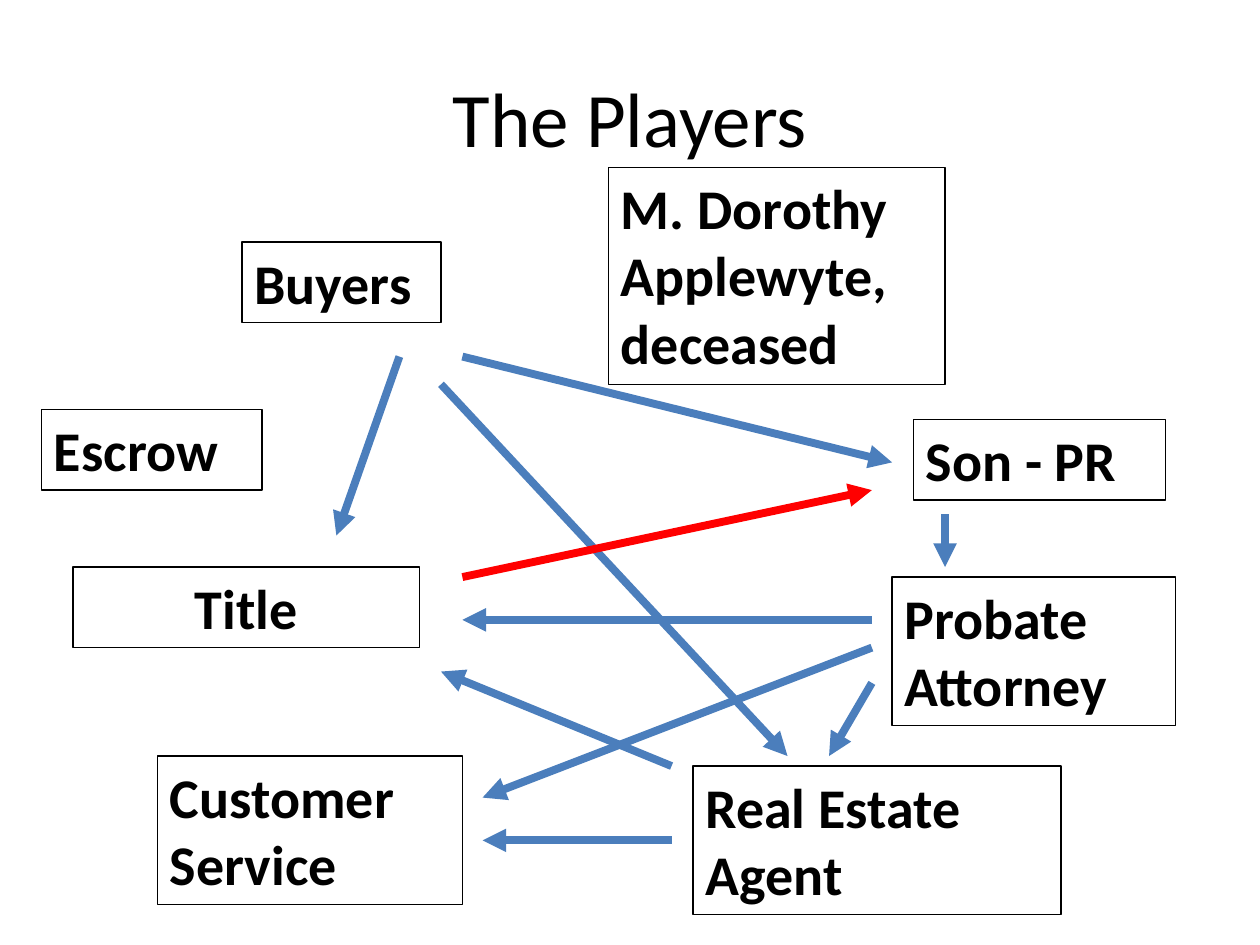
"""Builds the slide showing the players in a probate sale and how they connect."""
import dataclasses

import lxml.etree
import pptx
import pptx.dml.color
import pptx.enum.shapes
import pptx.enum.text
import pptx.oxml.ns
import pptx.util
from pptx.util import Inches


@dataclasses.dataclass(frozen=True)
class Theme:
    font: str = "Calibri"
    title_size: int = 44
    label_size: int = 32
    border_width: float = 0.75
    arrow_width: float = 4.5
    text: str = "000000"
    arrow: str = "4B7EBC"
    alert: str = "FF0000"


theme = Theme()
ALIGN = pptx.enum.text.PP_ALIGN
ANCHOR = pptx.enum.text.MSO_ANCHOR
color = pptx.dml.color.RGBColor.from_string
qn = pptx.oxml.ns.qn


def write(frame, text, size, bold, align, anchor):
    frame.text = text
    frame.word_wrap = True
    frame.vertical_anchor = anchor
    para = frame.paragraphs[0]
    para.alignment = align
    span = para.runs[0]
    span.font.name = theme.font
    span.font.size = pptx.util.Pt(size)
    span.font.bold = bold
    span.font.color.rgb = color(theme.text)


deck = pptx.Presentation()
deck.slide_width, deck.slide_height = Inches(10), Inches(7.5)
page = deck.slides.add_slide(deck.slide_layouts[5])

title = page.shapes.title
title.left, title.top = Inches(0.5), Inches(0.3)
title.width, title.height = Inches(9), Inches(1.25)
write(title.text_frame, "The Players", theme.title_size, False, ALIGN.CENTER, ANCHOR.MIDDLE)

line_heights = {1: 0.64, 2: 1.18, 3: 1.72}
players = [
    ("M. Dorothy Applewyte, deceased", 4.83, 1.33, 2.67, 3, ALIGN.LEFT),
    ("Son - PR", 7.25, 3.33, 2, 1, ALIGN.LEFT),
    ("Probate Attorney", 7.08, 4.58, 2.25, 2, ALIGN.LEFT),
    ("Real Estate Agent", 5.5, 6.08, 2.92, 2, ALIGN.LEFT),
    ("Customer Service", 1.25, 6, 2.42, 2, ALIGN.LEFT),
    ("Title", 0.58, 4.5, 2.75, 1, ALIGN.CENTER),
    ("Escrow", 0.33, 3.25, 1.75, 1, ALIGN.LEFT),
    ("Buyers", 1.92, 1.92, 1.58, 1, ALIGN.LEFT),
]
for name, left, top, width, lines, align in players:
    box = page.shapes.add_shape(
        pptx.enum.shapes.MSO_SHAPE.RECTANGLE,
        Inches(left), Inches(top), Inches(width), Inches(line_heights[lines]),
    )
    box.shadow.inherit = False
    box.fill.background()
    box.line.color.rgb = color(theme.text)
    box.line.width = pptx.util.Pt(theme.border_width)
    write(box.text_frame, name, theme.label_size, True, align, ANCHOR.TOP)
    box.text_frame.auto_size = pptx.enum.text.MSO_AUTO_SIZE.SHAPE_TO_FIT_TEXT

arrows = [
    (3.17, 2.83, 2.67, 4.25, theme.arrow),
    (3.67, 2.83, 7.08, 3.67, theme.arrow),
    (3.5, 3.05, 6.25, 6, theme.arrow),
    (7.5, 4.08, 7.5, 4.5, theme.arrow),
    (6.92, 5.42, 6.58, 6, theme.arrow),
    (6.92, 4.92, 3.67, 4.92, theme.arrow),
    (6.92, 5.14, 3.83, 6.33, theme.arrow),
    (5.33, 6.67, 3.83, 6.67, theme.arrow),
    (5.33, 6.08, 3.5, 5.33, theme.arrow),
    (3.67, 4.58, 6.92, 3.89, theme.alert),
]
for start_x, start_y, end_x, end_y, shade in arrows:
    arrow = page.shapes.add_connector(
        pptx.enum.shapes.MSO_CONNECTOR.STRAIGHT,
        Inches(start_x), Inches(start_y), Inches(end_x), Inches(end_y),
    )
    arrow.line.color.rgb = color(shade)
    arrow.line.width = pptx.util.Pt(theme.arrow_width)
    properties = arrow.element.spPr
    lxml.etree.SubElement(properties.find(qn("a:ln")), qn("a:tailEnd"), type="triangle")
    lxml.etree.SubElement(properties, qn("a:effectLst"))

deck.save("out.pptx")
